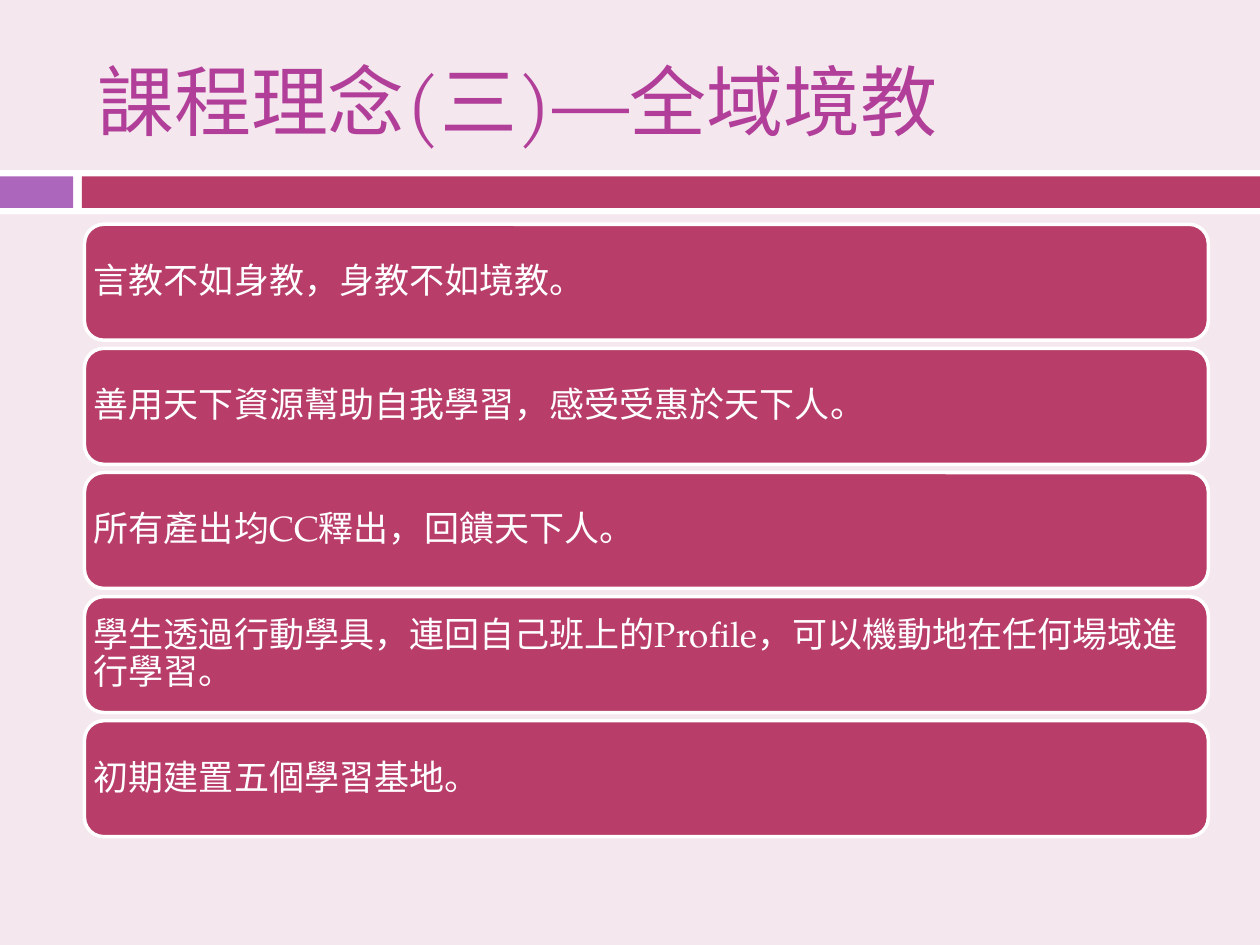
from typing import NamedTuple

from pptx import Presentation
from pptx.dml.color import RGBColor
from pptx.enum import shapes, text
from pptx.util import Inches, Pt

WHITE = RGBColor(0xFF, 0xFF, 0xFF)
BACKGROUND = RGBColor(0xF4, 0xE7, 0xED)
CRIMSON = RGBColor(0xB8, 0x3D, 0x68)
PURPLE = RGBColor(0xAC, 0x66, 0xBB)
MAGENTA = RGBColor(0xB1, 0x3F, 0x9A)
FONT = "TeX Gyre Pagella"

LEFT, WIDTH = 0.67, 8.92
CARD_TOP, CARD_HEIGHT, CARD_STEP = 1.78, 0.92, 0.985


class Bar(NamedTuple):
    left: float
    top: float
    width: float
    height: float
    color: RGBColor


BARS = [
    Bar(0, 1.35, 10, 0.35, WHITE),
    Bar(0, 1.4, 0.58, 0.25, PURPLE),
    Bar(0.65, 1.4, 9.35, 0.25, CRIMSON),
]
IDEAS = [
    "言教不如身教，身教不如境教。",
    "善用天下資源幫助自我學習，感受受惠於天下人。",
    "所有產出均CC釋出，回饋天下人。",
    "學生透過行動學具，連回自己班上的Profile，可以機動地在任何場域進行學習。",
    "初期建置五個學習基地。",
]


def write(shape, words: str, *, size: float, color: RGBColor,
          inset_x: float, inset_y: float, spacing: float = 1.0) -> None:
    """Put left-aligned, vertically centred text into a shape."""
    frame = shape.text_frame
    frame.word_wrap = True
    frame.auto_size = text.MSO_AUTO_SIZE.NONE
    frame.vertical_anchor = text.MSO_ANCHOR.MIDDLE
    frame.margin_left = frame.margin_right = Inches(inset_x)
    frame.margin_top = frame.margin_bottom = Inches(inset_y)
    para = frame.paragraphs[0]
    para.alignment = text.PP_ALIGN.LEFT
    para.line_spacing = spacing
    span = para.add_run()
    span.text = words
    span.font.name = FONT
    span.font.size = Pt(size)
    span.font.color.rgb = color


def add_box(page, kind, left: float, top: float, width: float, height: float,
            fill: RGBColor):
    """Add a flat filled shape without an outline."""
    box = page.shapes.add_shape(kind, Inches(left), Inches(top),
                                Inches(width), Inches(height))
    box.shadow.inherit = False
    box.fill.solid()
    box.fill.fore_color.rgb = fill
    box.line.fill.background()
    return box


def add_card(page, index: int, words: str) -> None:
    card = add_box(page, shapes.MSO_SHAPE.ROUNDED_RECTANGLE, LEFT,
                   CARD_TOP + index * CARD_STEP, WIDTH, CARD_HEIGHT, CRIMSON)
    card.line.color.rgb = WHITE
    card.line.width = Pt(2)
    # The rounded corners already push the text in by about 0.05 inch
    write(card, words, size=20, color=WHITE, inset_x=0.03, inset_y=0.03,
          spacing=0.9)


def main() -> None:
    deck = Presentation()
    deck.slide_width, deck.slide_height = Inches(10), Inches(7.5)
    page = deck.slides.add_slide(deck.slide_layouts[5])
    page.background.fill.solid()
    page.background.fill.fore_color.rgb = BACKGROUND

    # Band under the title
    for bar in BARS:
        add_box(page, shapes.MSO_SHAPE.RECTANGLE, *bar)

    # Title
    title = page.shapes.title
    title.left, title.top = Inches(LEFT), Inches(0.25)
    title.width, title.height = Inches(WIDTH), Inches(1.08)
    write(title, "課程理念(三)—全域境教", size=44, color=MAGENTA,
          inset_x=0.1, inset_y=0.05)

    # Stack of idea cards
    for index, words in enumerate(IDEAS):
        add_card(page, index, words)

    deck.save("out.pptx")


if __name__ == "__main__":
    main()
